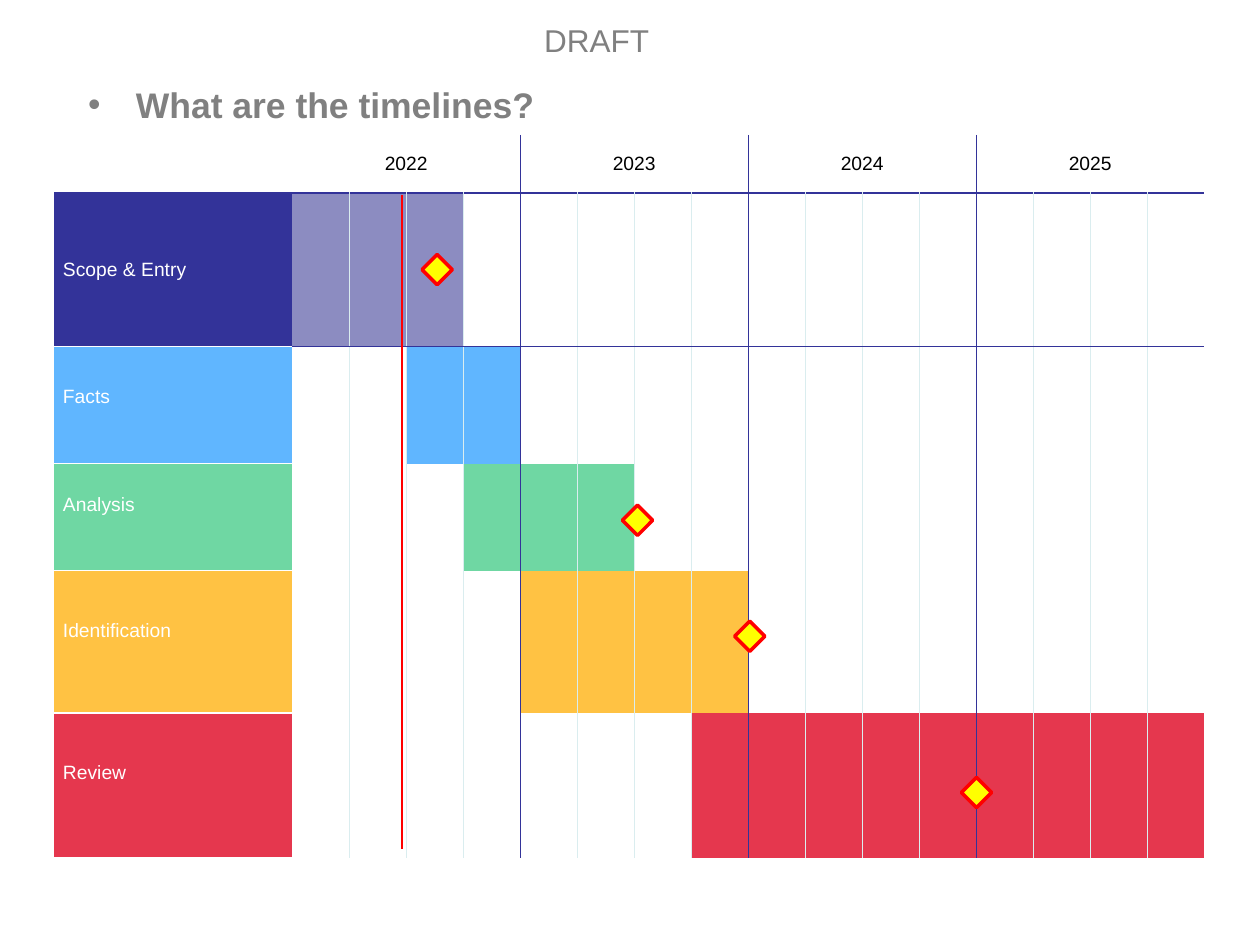
import pptx
import pptx.util
import pptx.dml.color
import pptx.enum.shapes
import pptx.enum.text
import pptx.oxml.ns
from lxml import etree

Inches, Pt = pptx.util.Inches, pptx.util.Pt
RGBColor = pptx.dml.color.RGBColor
qn = pptx.oxml.ns.qn
MIDDLE = pptx.enum.text.MSO_ANCHOR.MIDDLE
CENTER = pptx.enum.text.PP_ALIGN.CENTER

NAVY = RGBColor(0x33, 0x33, 0x99)
LAVENDER = RGBColor(0x8C, 0x8C, 0xC1)
BLUE = RGBColor(0x60, 0xB6, 0xFF)
GREEN = RGBColor(0x6F, 0xD7, 0xA3)
AMBER = RGBColor(0xFF, 0xC2, 0x43)
CRIMSON = RGBColor(0xE5, 0x37, 0x4E)
PALE = RGBColor(0xDA, 0xED, 0xEF)
GRAY = RGBColor(0x80, 0x80, 0x80)
WHITE = RGBColor(0xFF, 0xFF, 0xFF)
BLACK = RGBColor(0, 0, 0)
RED = RGBColor(0xFF, 0, 0)
YELLOW = RGBColor(0xFF, 0xFF, 0)

YEARS = ["2022", "2023", "2024", "2025"]
# label, label colour, bar colour, first quarter, end quarter, height, label bottom inset
PHASES = [
    ("Scope & Entry", NAVY, LAVENDER, 0, 3, 1.22, 0),
    ("Facts", BLUE, BLUE, 2, 4, 0.93, 0.13),
    ("Analysis", GREEN, GREEN, 3, 6, 0.85, 0.2),
    ("Identification", AMBER, AMBER, 4, 8, 1.13, 0.17),
    ("Review", CRIMSON, CRIMSON, 7, 16, 1.15, 0.2),
]
MILESTONES = [(3.35, 2.02), (4.94, 4.01), (5.83, 4.93), (7.63, 6.17)]

LEFT, TOP, WIDTH = 0.43, 1.07, 9.13
LABEL_W, HEADER_H = 1.89, 0.46
QUARTERS = 4 * len(YEARS)
NO_STYLE = "{2D5ABB26-0587-4C30-8999-92F81FD0307C}"


def add_run(p, text, size, color, bold=False):
    r = p.add_run()
    r.text = text
    r.font.name = "Arial"
    r.font.size = Pt(size)
    r.font.bold = bold
    r.font.color.rgb = color


def add_text(slide, x, y, w, h):
    tf = slide.shapes.add_textbox(Inches(x), Inches(y), Inches(w), Inches(h)).text_frame
    tf.word_wrap = True
    return tf


def set_borders(cell, **colors):
    """Draw the given sides (L, R, T, B) as 1 pt lines; must precede the fill."""
    tcPr = cell._tc.get_or_add_tcPr()
    for side in "LRTB":
        if colors.get(side) is not None:
            ln = etree.SubElement(tcPr, qn("a:ln" + side), w=str(Pt(1)))
            fill = etree.SubElement(ln, qn("a:solidFill"))
            etree.SubElement(fill, qn("a:srgbClr"), val=str(colors[side]))


def quarter_edge(q):
    """Colour of the vertical line at the start of quarter q."""
    if q in (0, QUARTERS):
        return None
    return PALE if q % 4 else NAVY


def fill_cell(cell, color):
    cell.fill.solid()
    cell.fill.fore_color.rgb = color


def write_cell(cell, text, color, bottom=0):
    cell.vertical_anchor = MIDDLE
    cell.margin_left = cell.margin_right = Inches(0.07)
    cell.margin_top, cell.margin_bottom = 0, Inches(bottom)
    p = cell.text_frame.paragraphs[0]
    add_run(p, text, 11, color)
    return p


def add_timeline(slide):
    heights = [HEADER_H] + [phase[5] for phase in PHASES]
    frame = slide.shapes.add_table(len(heights), QUARTERS + 1, Inches(LEFT), Inches(TOP),
                                   Inches(WIDTH), Inches(sum(heights)))
    table = frame.table
    table.first_row = table.horz_banding = False
    frame._element.find(".//" + qn("a:tableStyleId")).text = NO_STYLE
    for row, height in zip(table.rows, heights):
        row.height = Inches(height)
    table.columns[0].width = Inches(LABEL_W)
    for q in range(QUARTERS):
        table.columns[q + 1].width = Inches((WIDTH - LABEL_W) / QUARTERS)

    set_borders(table.cell(0, 0), B=NAVY)
    for q in range(QUARTERS):
        year_start, year_end = q % 4 == 0, q % 4 == 3
        set_borders(table.cell(0, q + 1), B=NAVY,
                    L=quarter_edge(q) if year_start else None,
                    R=quarter_edge(q + 1) if year_end or year_start and q < 12 and False else None)
    for i, year in enumerate(YEARS):
        cell = table.cell(0, 4 * i + 1)
        cell.merge(table.cell(0, 4 * i + 4))
        write_cell(cell, year, BLACK).alignment = CENTER

    for i, (label, color, bar, start, end, _, bottom) in enumerate(PHASES, 1):
        top = NAVY if i == 1 else None
        cell = table.cell(i, 0)
        set_borders(cell, T=top or WHITE, B=WHITE)
        fill_cell(cell, color)
        write_cell(cell, label, WHITE, bottom)
        for q in range(QUARTERS):
            cell = table.cell(i, q + 1)
            set_borders(cell, L=quarter_edge(q), R=quarter_edge(q + 1), T=top)
            if start <= q < end:
                fill_cell(cell, bar)


def add_today_line(slide):
    line = slide.shapes.add_connector(pptx.enum.shapes.MSO_CONNECTOR.STRAIGHT,
                                      Inches(3.19), Inches(1.55), Inches(3.19), Inches(6.74))
    line.line.color.rgb = RED
    line.line.width = Pt(1.5)
    etree.SubElement(line._element.spPr, qn("a:effectLst"))


def add_milestone(slide, x, y):
    sp = slide.shapes.add_shape(pptx.enum.shapes.MSO_SHAPE.DIAMOND, Inches(x), Inches(y),
                                Inches(0.24), Inches(0.24))
    sp.shadow.inherit = False
    sp.fill.solid()
    sp.fill.fore_color.rgb = YELLOW
    sp.line.color.rgb = RED
    sp.line.width = Pt(2)


def add_heading(slide):
    tf = add_text(slide, 0.6, 0.66, 8.79, 0.4)
    tf.margin_right = tf.margin_top = tf.margin_bottom = 0
    p = tf.paragraphs[0]
    pPr = p._p.get_or_add_pPr()
    pPr.set("marL", str(Inches(0.38)))
    pPr.set("indent", str(-Inches(0.38)))
    etree.SubElement(pPr, qn("a:buFont"), typeface="Arial")
    etree.SubElement(pPr, qn("a:buChar"), char="•")
    add_run(p, "What are the timelines?", 20.3, GRAY, bold=True)


def main():
    prs = pptx.Presentation()
    prs.slide_width, prs.slide_height = Inches(10), Inches(7.5)
    slide = prs.slides.add_slide(prs.slide_layouts[6])
    add_heading(slide)
    add_timeline(slide)
    add_today_line(slide)
    for x, y in MILESTONES:
        add_milestone(slide, x, y)
    add_run(add_text(slide, 4.22, 0.12, 1.38, 0.4).paragraphs[0], "DRAFT", 18, GRAY)
    prs.save("out.pptx")


if __name__ == "__main__":
    main()
